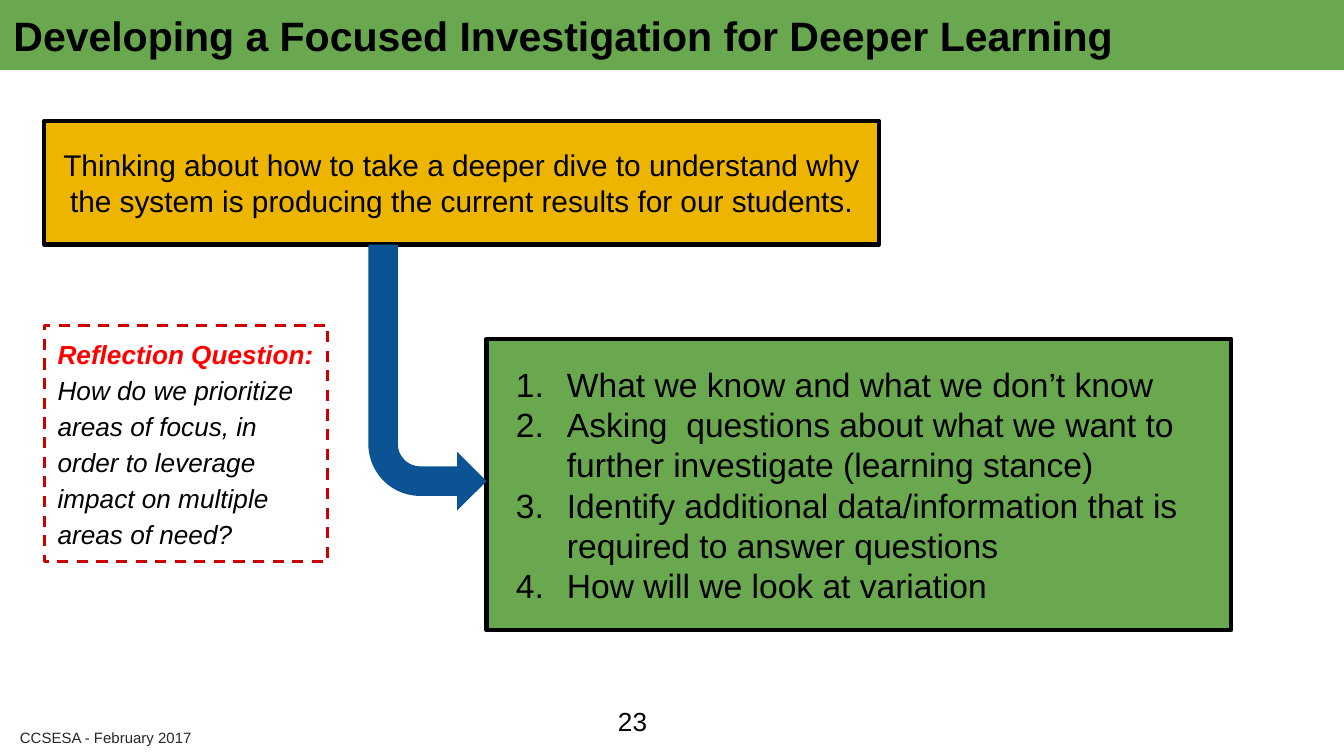
from dataclasses import dataclass

from lxml.etree import SubElement
from pptx import Presentation
from pptx.dml.color import RGBColor
from pptx.enum.dml import MSO_LINE
from pptx.enum.shapes import MSO_SHAPE as SHAPE
from pptx.enum.text import MSO_ANCHOR as ANCHOR, MSO_AUTO_SIZE as AUTO_SIZE, PP_ALIGN as ALIGN
from pptx.oxml.ns import qn
from pptx.util import Inches, Pt


@dataclass(frozen=True)
class Theme:
    font: str = "Arial"
    black: RGBColor = RGBColor.from_string("000000")
    gray: RGBColor = RGBColor.from_string("262626")
    green: RGBColor = RGBColor.from_string("6AA84F")
    gold: RGBColor = RGBColor.from_string("EEB500")
    blue: RGBColor = RGBColor.from_string("0B5394")
    dash_red: RGBColor = RGBColor.from_string("CC0000")
    text_red: RGBColor = RGBColor.from_string("FF0000")
    title: Pt = Pt(22)
    steps: Pt = Pt(18)
    lead: Pt = Pt(16)
    body: Pt = Pt(14)
    footer: Pt = Pt(8)


theme = Theme()


def write(shape, lines, size, color=theme.black, align=ALIGN.LEFT, anchor=ANCHOR.MIDDLE):
    """Fill a shape with one paragraph per line and return the paragraphs."""
    frame = shape.text_frame
    frame.word_wrap = True
    frame.auto_size = AUTO_SIZE.NONE
    frame.vertical_anchor = anchor
    frame.margin_left = frame.margin_right = Inches(0.1)
    frame.margin_top = frame.margin_bottom = Inches(0.1)
    frame.text = "\n".join(lines)
    for paragraph in frame.paragraphs:
        paragraph.alignment = align
        paragraph.font.name = theme.font
        paragraph.font.size = size
        paragraph.font.color.rgb = color
    return frame.paragraphs


def add_box(kind, box, fill=None, line=None, width=2.25):
    shape = slide.shapes.add_shape(kind, *map(Inches, box))
    shape.shadow.inherit = False
    if fill is None:
        shape.fill.background()
    else:
        shape.fill.solid()
        shape.fill.fore_color.rgb = fill
    if line is None:
        shape.line.fill.background()
    else:
        shape.line.color.rgb = line
        shape.line.width = Pt(width)
    return shape


# Widescreen slide, 16:9
prs = Presentation()
prs.slide_width = Inches(10)
prs.slide_height = Inches(10) * 9 // 16
slide = prs.slides.add_slide(prs.slide_layouts[5])

# Title band
title = slide.shapes.title
title.left, title.top, title.width, title.height = map(Inches, (0, 0, 10, 0.52))
title.fill.solid()
title.fill.fore_color.rgb = theme.green
heading = write(title, ["Developing a Focused Investigation for Deeper Learning"], theme.title)
heading[0].font.bold = True

# Footer and page number
footer = slide.shapes.add_textbox(*map(Inches, (0.05, 5.4, 1.59, 0.17)))
write(footer, ["CCSESA - February 2017"], theme.footer, theme.gray)
page_number = slide.shapes.add_textbox(*map(Inches, (4.5, 5.15, 0.6, 0.43)))
write(page_number, ["23"], theme.body)

# Leading thought
deeper_dive = add_box(SHAPE.RECTANGLE, (0.33, 0.9, 6.21, 0.92), theme.gold, theme.black)
write(deeper_dive, [
    "Thinking about how to take a deeper dive to understand why the system "
    "is producing the current results for our students.",
], theme.lead, align=ALIGN.CENTER)

# Numbered steps of the investigation
investigation = add_box(SHAPE.RECTANGLE, (3.62, 2.52, 5.54, 2.17), theme.green, theme.black)
steps = write(investigation, [
    "What we know and what we don’t know",
    "Asking  questions about what we want to further investigate (learning stance)",
    "Identify additional data/information that is required to answer questions",
    "How will we look at variation",
], theme.steps)
for step in steps:
    properties = step._p.get_or_add_pPr()
    properties.set("marL", str(Inches(0.5)))
    properties.set("indent", str(Inches(-0.38)))
    # Numbering has to come before the default run properties
    numbering = SubElement(properties, qn("a:buAutoNum"), type="arabicPeriod")
    properties.insert(0, numbering)

# Arrow from the thought down to the steps
arrow = add_box(SHAPE.BENT_ARROW, (2.74, 1.82, 0.88, 1.98), theme.blue)
for index, value in enumerate((0.25, 0.25, 0.25, 0.44)):
    arrow.adjustments[index] = value
arrow.rotation = 180
arrow._element.spPr.xfrm.set("flipH", "1")

# Reflection question
reflection = add_box(SHAPE.RECTANGLE, (0.33, 2.42, 2.11, 1.76), line=theme.dash_red, width=1.5)
reflection.line.dash_style = MSO_LINE.DASH
label, question = write(reflection, [
    "Reflection Question:",
    "How do we prioritize areas of focus, in order to leverage impact on "
    "multiple areas of need?",
], theme.body, anchor=ANCHOR.TOP)
label.font.bold = True
label.font.color.rgb = theme.text_red
label.font.italic = question.font.italic = True
question.line_spacing = 1.15

prs.save("out.pptx")
